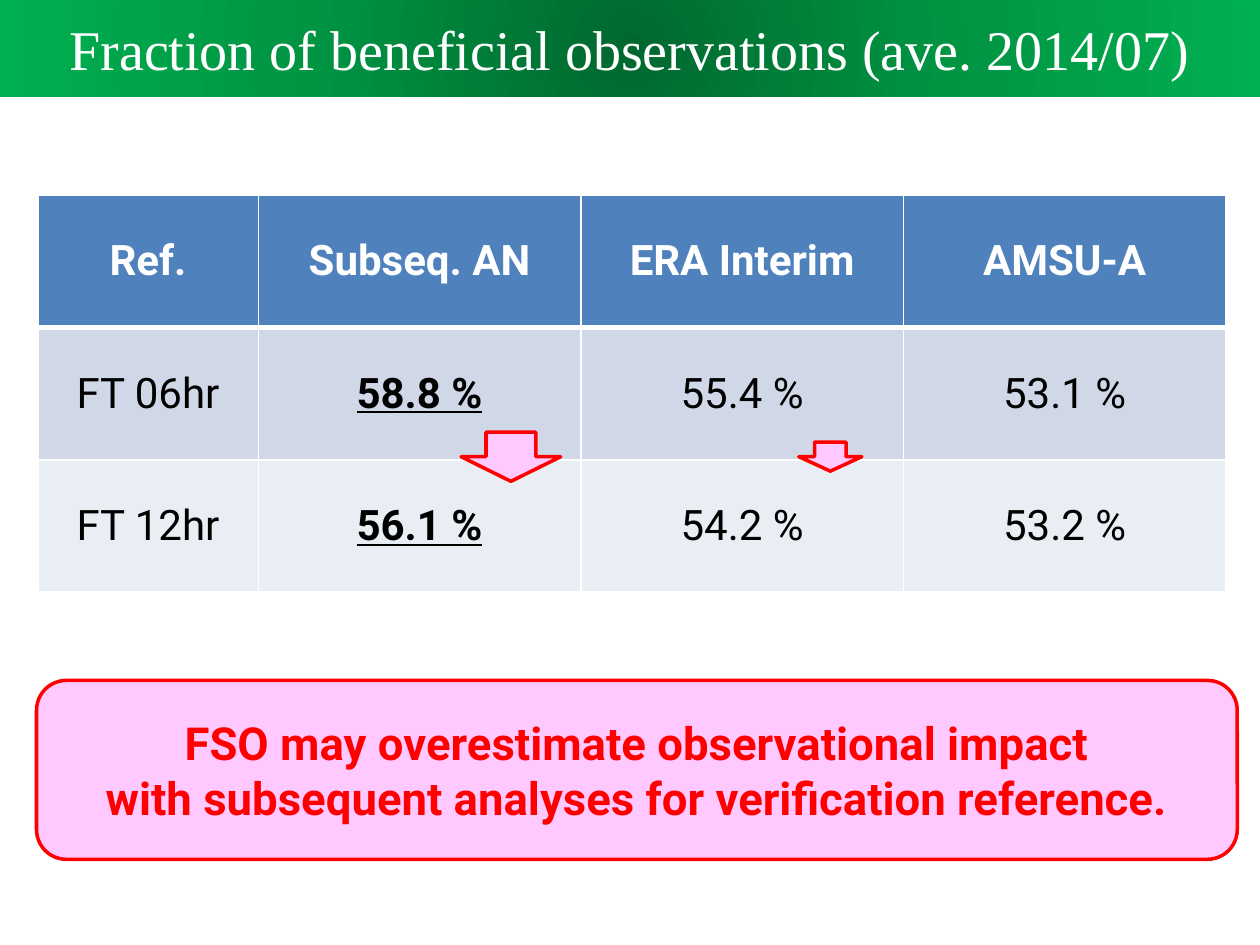
from dataclasses import dataclass

from pptx import Presentation
from pptx import oxml
from pptx import util as u
from pptx.dml.color import RGBColor
from pptx.enum import shapes, text
from pptx.oxml import ns
from pptx.util import Inches


@dataclass(frozen=True)
class Theme:
    title_font: str = "Times New Roman"
    body_font: str = "Roboto"
    title_size: int = 32
    table_size: int = 24
    message_size: int = 26
    white: str = "FFFFFF"
    black: str = "000000"
    red: str = "FF0000"
    pink: str = "FFC9FF"
    header: str = "4F81BD"
    bands: tuple = ("D0D8E8", "E9EDF4")
    banner: tuple = ((0, "00682F"), (50, "009443"), (100, "00B050"))


THEME = Theme()
ROWS = (
    ("Ref.", "Subseq. AN", "ERA Interim", "AMSU-A"),
    ("FT 06hr", "58.8 %", "55.4 %", "53.1 %"),
    ("FT 12hr", "56.1 %", "54.2 %", "53.2 %"),
)
COLUMN_WIDTHS = (1.75, 2.56, 2.56, 2.56)
EMPHASIS_COLUMN = 1


def write(frame, lines, font, size, color, bold=False, underline=False):
    """Fill a text frame with centred paragraphs in one style."""
    frame.word_wrap = True
    frame.text = "\n".join(lines)
    for paragraph in frame.paragraphs:
        paragraph.alignment = text.PP_ALIGN.CENTER
        paragraph.font.name = font
        paragraph.font.size = u.Pt(size)
        paragraph.font.color.rgb = RGBColor.from_string(color)
        paragraph.font.bold = bold
        paragraph.font.underline = underline


def add_box(slide, kind, box):
    shape = slide.shapes.add_shape(kind, *map(Inches, box))
    shape.shadow.inherit = False
    shape.text_frame.vertical_anchor = text.MSO_ANCHOR.MIDDLE
    return shape


def add_callout(slide, kind, box):
    """Add a pink shape with a red outline."""
    shape = add_box(slide, kind, box)
    shape.fill.solid()
    shape.fill.fore_color.rgb = RGBColor.from_string(THEME.pink)
    shape.line.color.rgb = RGBColor.from_string(THEME.red)
    shape.line.width = u.Pt(2)
    return shape


def fill_radial(shape, stops):
    """Give a shape a gradient that spreads from its centre."""
    stop_xml = "".join(
        f'<a:gs pos="{position * 1000}"><a:srgbClr val="{color}"/></a:gs>'
        for position, color in stops
    )
    gradient = oxml.parse_xml(
        f'<a:gradFill {ns.nsdecls("a")} rotWithShape="1"><a:gsLst>{stop_xml}</a:gsLst>'
        '<a:path path="circle">'
        '<a:fillToRect l="50000" t="50000" r="50000" b="50000"/>'
        "</a:path></a:gradFill>"
    )
    shape.fill.background()
    properties = shape.element.spPr
    properties.replace(properties.find(ns.qn("a:noFill")), gradient)


def add_title(slide, box, title):
    banner = add_box(slide, shapes.MSO_SHAPE.RECTANGLE, box)
    fill_radial(banner, THEME.banner)
    banner.line.fill.background()
    write(banner.text_frame, [title], THEME.title_font, THEME.title_size, THEME.white)


def set_borders(cell, top, bottom):
    """Draw white cell borders; top and bottom are widths in points."""
    properties = cell._tc.get_or_add_tcPr()
    for side, width in (("L", 1), ("R", 1), ("T", top), ("B", bottom)):
        properties.append(oxml.parse_xml(
            f'<a:ln{side} {ns.nsdecls("a")} w="{u.Pt(width)}"><a:solidFill>'
            f'<a:srgbClr val="{THEME.white}"/></a:solidFill></a:ln{side}>'
        ))


def add_fraction_table(slide, box):
    table = slide.shapes.add_table(
        len(ROWS), len(COLUMN_WIDTHS), *map(Inches, box)
    ).table
    for column, width in zip(table.columns, COLUMN_WIDTHS):
        column.width = Inches(width)
    for i, values in enumerate(ROWS):
        table.rows[i].height = Inches(box[3] / len(ROWS))
        is_header = i == 0
        fill = THEME.header if is_header else THEME.bands[i - 1]
        for j, value in enumerate(values):
            cell = table.cell(i, j)
            set_borders(cell, top=3 if i == 1 else 1, bottom=3 if is_header else 1)
            cell.fill.solid()
            cell.fill.fore_color.rgb = RGBColor.from_string(fill)
            cell.vertical_anchor = text.MSO_ANCHOR.MIDDLE
            emphasised = not is_header and j == EMPHASIS_COLUMN
            write(cell.text_frame, [value], THEME.body_font, THEME.table_size,
                  THEME.white if is_header else THEME.black,
                  bold=is_header or emphasised, underline=emphasised)


def add_message(slide, box, lines):
    panel = add_callout(slide, shapes.MSO_SHAPE.ROUNDED_RECTANGLE, box)
    write(panel.text_frame, lines, THEME.body_font, THEME.message_size,
          THEME.red, bold=True)


def main():
    presentation = Presentation()
    presentation.slide_width, presentation.slide_height = Inches(10), Inches(7.5)
    slide = presentation.slides.add_slide(presentation.slide_layouts[6])

    add_title(slide, (0, 0, 10, 0.77),
              "Fraction of beneficial observations (ave. 2014/07)")
    add_fraction_table(slide, (0.3, 1.55, 9.42, 3.15))
    add_message(slide, (0.29, 5.4, 9.53, 1.42), (
        "FSO may overestimate observational impact",
        "with subsequent analyses for verification reference.",
    ))
    for arrow_box in ((3.66, 3.43, 0.79, 0.39), (6.34, 3.51, 0.5, 0.23)):
        add_callout(slide, shapes.MSO_SHAPE.DOWN_ARROW, arrow_box)

    presentation.save("out.pptx")


if __name__ == "__main__":
    main()
